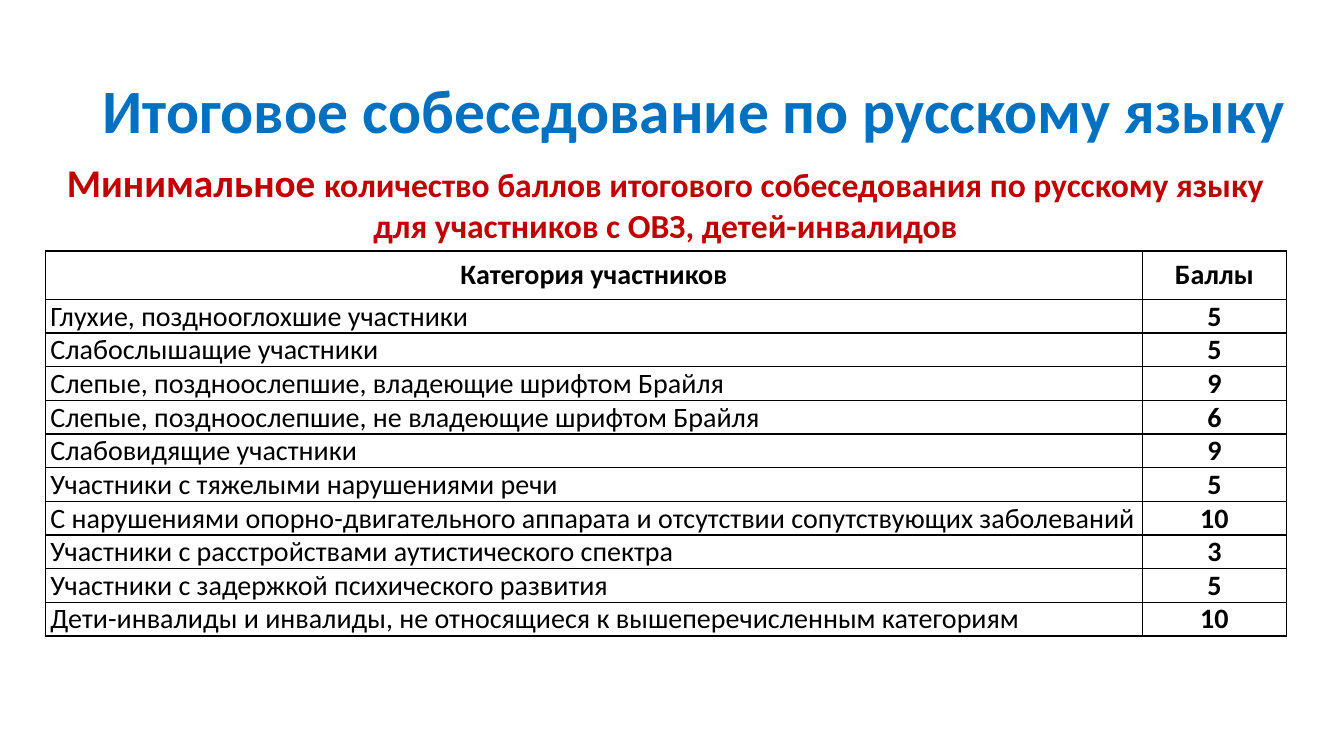
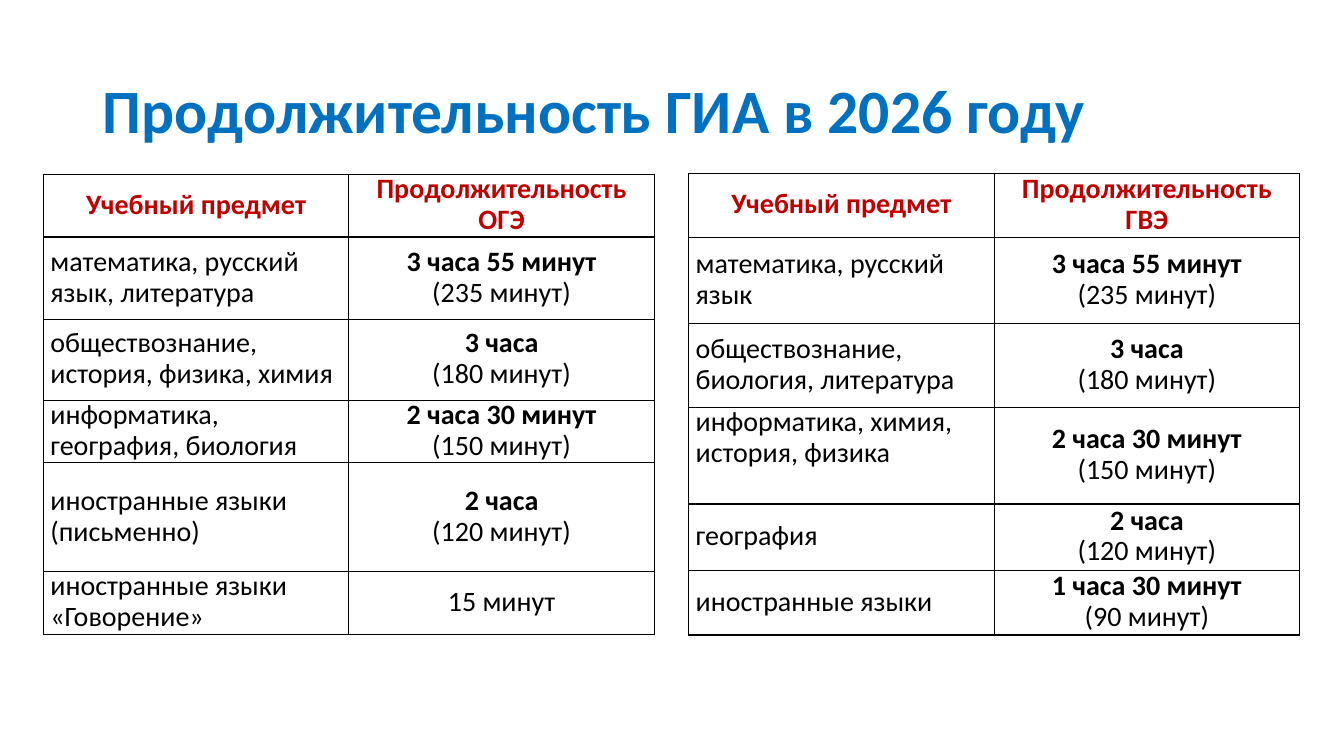
from lxml import etree
from pptx import Presentation
from pptx.dml.color import RGBColor
from pptx.enum import text
from pptx.oxml import ns
from pptx.util import Inches, Pt

BLUE = RGBColor(0x00, 0x70, 0xC0)
RED = RGBColor(0xC0, 0x00, 0x00)
BLACK = RGBColor(0x00, 0x00, 0x00)
WHITE = RGBColor(0xFF, 0xFF, 0xFF)
FONT = "Calibri"
TITLE_ONLY = 5


class Deck:
    """Holds the shared style and the current slide."""

    def __init__(self):
        self.file = Presentation()
        self.file.slide_width = Inches(13.33)
        self.file.slide_height = Inches(7.5)
        self.page = None

    def style(self, span, size, color, bold):
        span.font.name = FONT
        span.font.size = Pt(size)
        span.font.color.rgb = color
        span.font.bold = bold

    def add_page(self, title, title_width):
        self.page = self.file.slides.add_slide(self.file.slide_layouts[TITLE_ONLY])
        box = self.page.shapes.title
        box.left, box.top = Inches(0.92), Inches(0.4)
        box.width, box.height = Inches(title_width), Inches(1.45)
        frame = box.text_frame
        frame.text = title
        frame.vertical_anchor = text.MSO_ANCHOR.MIDDLE
        para = frame.paragraphs[0]
        para.alignment = text.PP_ALIGN.LEFT
        para.line_spacing = 0.9
        self.style(para.runs[0], 44, BLUE, True)

    def add_subtitle(self, parts):
        """Add a centred red line made of (wording, size) parts."""
        box = self.page.shapes.add_textbox(
            Inches(0.52), Inches(1.52), Inches(12.16), Inches(0.98))
        box.text_frame.word_wrap = True
        para = box.text_frame.paragraphs[0]
        para.alignment = text.PP_ALIGN.CENTER
        for wording, size in parts:
            span = para.add_run()
            span.text = wording
            self.style(span, size, RED, True)

    def add_table(self, left, top, widths, heights, rows, header_color,
                  margins, spacing=None, bold_single=False):
        """Add a ruled table; the second column is centred, its first line bold."""
        grid = self.page.shapes.add_table(
            len(rows), len(widths), Inches(left), Inches(top),
            Inches(sum(widths)), Inches(sum(heights))).table
        grid.horz_banding = False
        for column, width in zip(grid.columns, widths):
            column.width = Inches(width)
        for row, height in zip(grid.rows, heights):
            row.height = Inches(height)

        for r, row in enumerate(rows):
            for c, wording in enumerate(row):
                cell = grid.cell(r, c)
                cell.text_frame.text = wording
                cell.vertical_anchor = text.MSO_ANCHOR.MIDDLE
                side, cell.margin_top = Inches(margins[0]), Inches(margins[1])
                cell.margin_left = cell.margin_right = side
                cell.margin_bottom = 0
                self.add_borders(cell)
                cell.fill.solid()
                cell.fill.fore_color.rgb = WHITE

                header = r == 0
                paras = cell.text_frame.paragraphs
                lead_bold = c == 1 and (bold_single or len(paras) > 1)
                for i, para in enumerate(paras):
                    centred = header or c == 1
                    para.alignment = (text.PP_ALIGN.CENTER if centred
                                      else text.PP_ALIGN.LEFT)
                    if spacing:
                        para.line_spacing = Pt(spacing)
                    self.style(para.runs[0], 20, header_color if header else BLACK,
                               header or (lead_bold and i == 0))
        return grid

    def add_borders(self, cell):
        properties = cell._tc.get_or_add_tcPr()
        for edge in ("a:lnL", "a:lnR", "a:lnT", "a:lnB"):
            line = etree.SubElement(properties, ns.qn(edge), w=str(Pt(1)))
            fill = etree.SubElement(line, ns.qn("a:solidFill"))
            etree.SubElement(fill, ns.qn("a:srgbClr"), val=str(BLACK))


SCORES = [
    ("Категория участников", "Баллы"),
    ("Глухие, позднооглохшие участники", "5"),
    ("Слабослышащие участники", "5"),
    ("Слепые, поздноослепшие, владеющие шрифтом Брайля", "9"),
    ("Слепые, поздноослепшие, не владеющие шрифтом Брайля", "6"),
    ("Слабовидящие участники", "9"),
    ("Участники с тяжелыми нарушениями речи", "5"),
    ("С нарушениями опорно-двигательного аппарата и отсутствии "
     "сопутствующих заболеваний", "10"),
    ("Участники с расстройствами аутистического спектра", "3"),
    ("Участники с задержкой психического развития", "5"),
    ("Дети-инвалиды и инвалиды, не относящиеся к вышеперечисленным "
     "категориям", "10"),
]

OGE_TIMES = [
    ("Учебный предмет", "Продолжительность ОГЭ"),
    ("математика, русский язык, литература", "3 часа 55 минут\n(235 минут)"),
    ("обществознание, история, физика, химия", "3 часа\n(180 минут)"),
    ("информатика, география, биология", "2 часа 30 минут\n(150 минут)"),
    ("иностранные языки (письменно)", "2 часа\n(120 минут)"),
    ("иностранные языки «Говорение»", "15 минут"),
]

GVE_TIMES = [
    ("Учебный предмет", "Продолжительность ГВЭ"),
    ("математика, русский язык", "3 часа 55 минут\n(235 минут)"),
    ("обществознание, биология, литература", "3 часа\n(180 минут)"),
    ("информатика, химия, история, физика", "2 часа 30 минут\n(150 минут)"),
    ("география", "2 часа\n(120 минут)"),
    ("иностранные языки", "1 часа 30 минут\n(90 минут)"),
]


def main():
    deck = Deck()

    # Minimum interview scores
    deck.add_page("Итоговое собеседование по русскому языку", 12.04)
    deck.add_subtitle([
        ("Минимальное ", 28),
        ("количество баллов итогового собеседования по русскому языку "
         "для участников с ОВЗ, детей-инвалидов", 24),
    ])
    deck.add_table(0.45, 2.49, [10.88, 1.43], [0.48] + [0.33] * 10, SCORES,
                   BLACK, (0.05, 0), bold_single=True)

    # Exam durations, two tables side by side
    deck.add_page("Продолжительность ГИА в 2026 году", 11.5)
    halves = [3.03, 3.03]
    deck.add_table(0.43, 1.73, halves, [0.62, 0.82, 0.8, 0.62, 1.08, 0.62],
                   OGE_TIMES, RED, (0.07, 0.01), spacing=22)
    gve = deck.add_table(6.83, 1.72, halves, [0.64, 0.85, 0.83, 0.96, 0.66, 0.64],
                         GVE_TIMES, RED, (0.07, 0.01), spacing=22)
    gve.cell(3, 0).vertical_anchor = text.MSO_ANCHOR.TOP

    deck.file.save("out.pptx")


if __name__ == "__main__":
    main()
